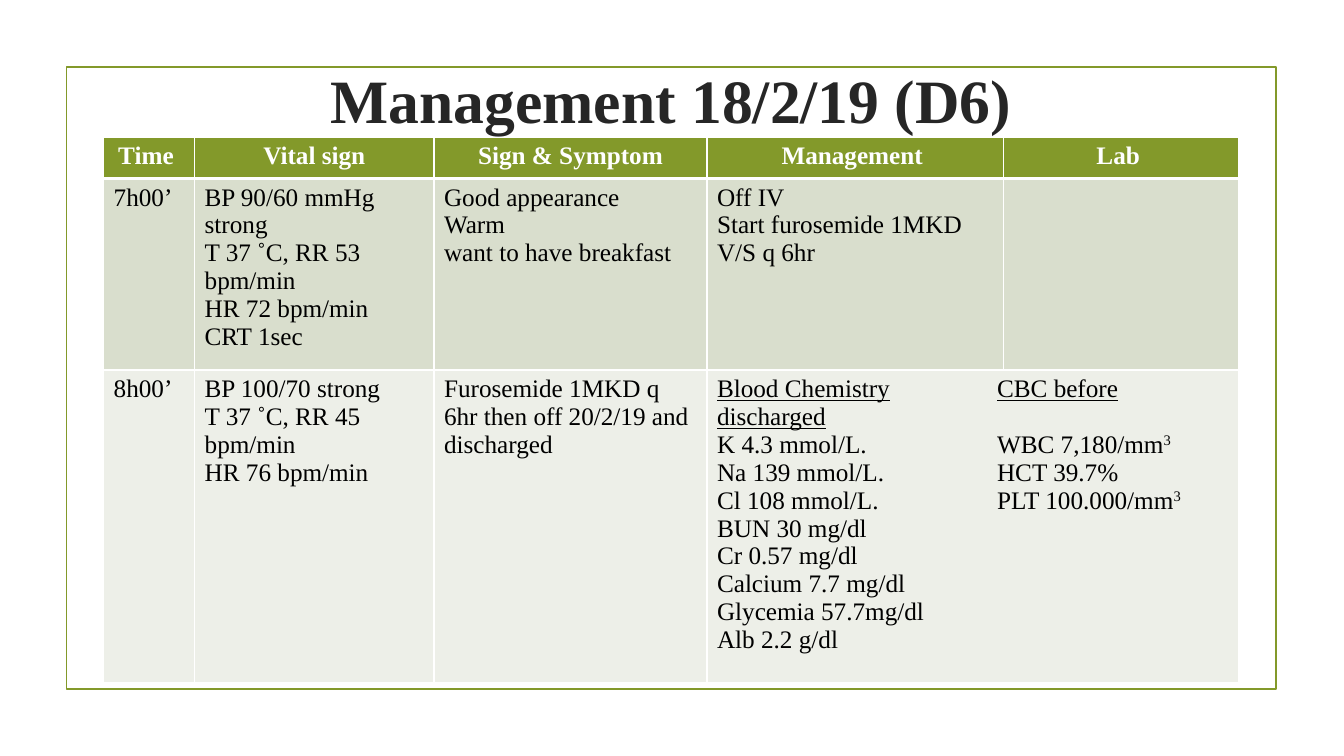
from dataclasses import dataclass

from pptx import Presentation
from pptx.dml.color import RGBColor
from pptx.enum.shapes import MSO_SHAPE
from pptx.enum.text import MSO_ANCHOR, PP_ALIGN
from pptx.oxml.xmlchemy import OxmlElement
from pptx.util import Pt


@dataclass(frozen=True)
class Theme:
    font: str = "Times New Roman"
    title_size: int = 44
    table_size: int = 18
    green: str = "83992A"
    dark: str = "262626"
    black: str = "000000"
    white: str = "FFFFFF"
    bands: tuple = ("D9DECD", "EDEFE8")


theme = Theme()


def add_text(paragraph, text, size=theme.table_size, color=theme.black,
             bold=False, underline=False, superscript=False):
    run = paragraph.add_run()
    run.text = text
    run.font.name = theme.font
    run.font.size = Pt(size)
    run.font.color.rgb = RGBColor.from_string(color)
    run.font.bold = bold
    run.font.underline = underline
    if superscript:
        run.font._element.set("baseline", "30000")


def add_border(cell, side, width):
    line = OxmlElement(f"a:ln{side}")
    line.set("w", str(Pt(width)))
    fill = OxmlElement("a:solidFill")
    color = OxmlElement("a:srgbClr")
    color.set("val", theme.white)
    fill.append(color)
    line.append(fill)
    cell._tc.get_or_add_tcPr().append(line)


presentation = Presentation()
presentation.slide_width = Pt(960)
presentation.slide_height = Pt(540)
slide = presentation.slides.add_slide(presentation.slide_layouts[6])

# Frame
frame = slide.shapes.add_shape(MSO_SHAPE.RECTANGLE, Pt(47.5), Pt(48), Pt(864), Pt(444))
frame.shadow.inherit = False
frame.fill.background()
frame.line.color.rgb = RGBColor.from_string(theme.green)
frame.line.width = Pt(1.25)

# Title
title = slide.shapes.add_textbox(Pt(101.5), Pt(19), Pt(756), Pt(103)).text_frame
title.word_wrap = True
title.vertical_anchor = MSO_ANCHOR.MIDDLE
title.paragraphs[0].alignment = PP_ALIGN.CENTER
add_text(title.paragraphs[0], "Management 18/2/19 (D6)",
         size=theme.title_size, color=theme.dark, bold=True)

# Table content: a cell is a list of paragraphs, a paragraph is text or a list of runs
underlined = {"underline": True}
cubed = ("3", {"superscript": True})
lab_results = [
    [("Blood Chemistry", underlined), ("\t", {}), ("CBC before discharged", underlined)],
    [("K 4.3 mmol/L.\tWBC 7,180/mm", {}), cubed],
    "Na 139 mmol/L.\tHCT 39.7%",
    [("Cl 108 mmol/L.\tPLT 100.000/mm", {}), cubed],
    "BUN 30 mg/dl",
    "Cr 0.57 mg/dl",
    "Calcium 7.7 mg/dl",
    "Glycemia 57.7mg/dl",
    "Alb 2.2 g/dl",
]
rows = [
    [["Time "], ["Vital sign"], ["Sign & Symptom"], ["Management "], ["Lab "]],
    [
        ["7h00’"],
        ["BP 90/60 mmHg strong", "T 37 ˚C, RR 53 bpm/min", "HR 72 bpm/min", "CRT 1sec"],
        ["Good appearance", "Warm", "want to have breakfast"],
        ["Off IV", "Start furosemide 1MKD", "V/S q 6hr"],
        [],
    ],
    [
        ["8h00’"],
        ["BP 100/70 strong", "T 37 ˚C, RR 45 bpm/min", "HR 76 bpm/min"],
        ["Furosemide 1MKD q 6hr then off 20/2/19 and discharged"],
        lab_results,
        [],
    ],
]
column_widths = [65, 171, 195, 212, 168]
row_heights = [29.5, 126.5, 206]
lab_tab = 200

# Table
table = slide.shapes.add_table(len(rows), len(column_widths), Pt(74), Pt(98),
                               Pt(sum(column_widths)), Pt(sum(row_heights))).table
for column, width in zip(table.columns, column_widths):
    column.width = Pt(width)
for row, height in zip(table.rows, row_heights):
    row.height = Pt(height)
table.cell(2, 3).merge(table.cell(2, 4))

for row_index, row in enumerate(rows):
    header = row_index == 0
    fill_color = theme.green if header else theme.bands[row_index - 1]
    text_format = {"color": theme.white, "bold": True} if header else {}
    borders = {"L": 1, "R": 1, "T": 1, "B": 3} if header else {"L": 1, "R": 1, "B": 1}
    for column_index, content in enumerate(row):
        cell = table.cell(row_index, column_index)
        for side, width in borders.items():
            add_border(cell, side, width)
        cell.fill.solid()
        cell.fill.fore_color.rgb = RGBColor.from_string(fill_color)
        for index, runs in enumerate(content):
            text_frame = cell.text_frame
            paragraph = text_frame.add_paragraph() if index else text_frame.paragraphs[0]
            if header:
                paragraph.alignment = PP_ALIGN.CENTER
            if content is lab_results:
                tab_list = OxmlElement("a:tabLst")
                tab = OxmlElement("a:tab")
                tab.set("pos", str(Pt(lab_tab)))
                tab.set("algn", "l")
                tab_list.append(tab)
                paragraph._p.get_or_add_pPr().append(tab_list)
            for text, run_format in [(runs, {})] if isinstance(runs, str) else runs:
                add_text(paragraph, text, **text_format, **run_format)

presentation.save("out.pptx")
